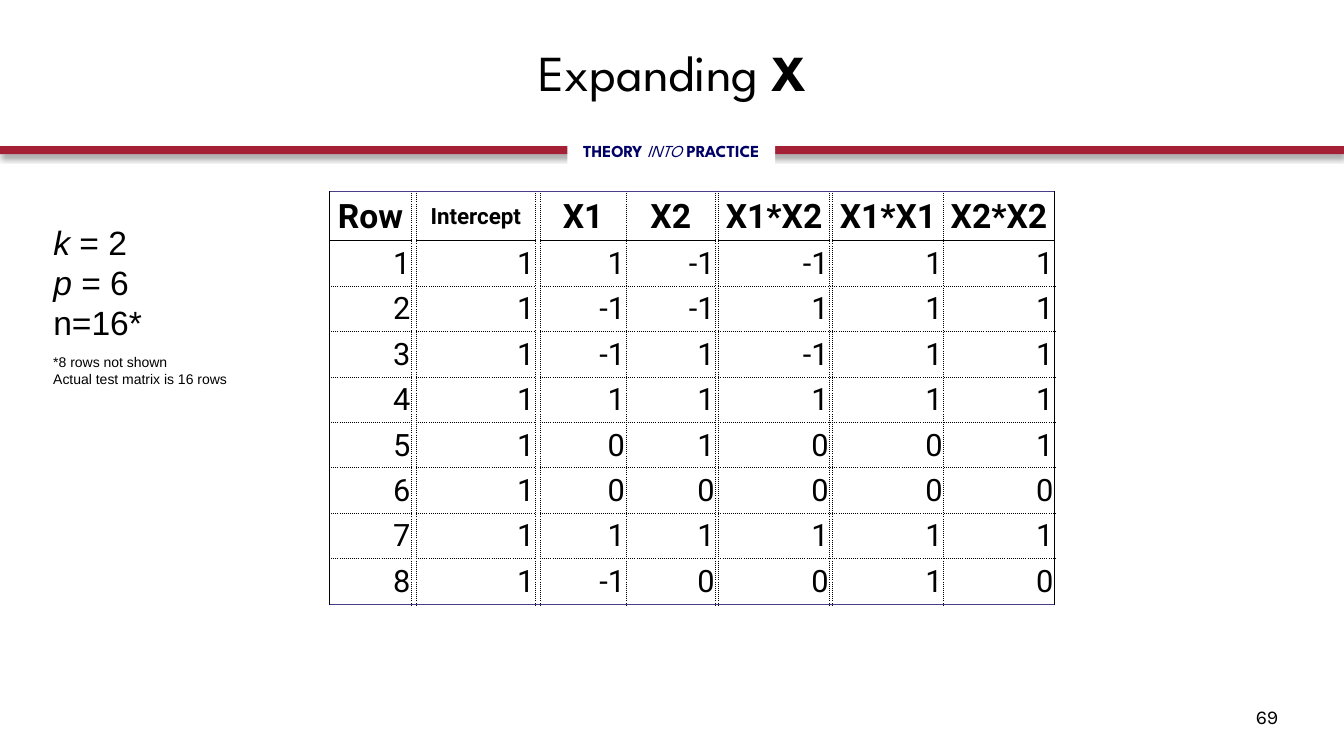
"""Builds the slide that expands the model matrix X."""
import dataclasses
import typing

import lxml.etree
import pptx
import pptx.dml.color
import pptx.enum.shapes
import pptx.enum.text
import pptx.oxml.ns
import pptx.util

CELL = pptx.util.Inches(0.1)
BLACK = pptx.dml.color.RGBColor(0, 0, 0)
WHITE = pptx.dml.color.RGBColor(255, 255, 255)
RED = pptx.dml.color.RGBColor(0xA4, 0x21, 0x35)
NAVY = pptx.dml.color.RGBColor(0, 0, 0x66)
PURPLE = pptx.dml.color.RGBColor(0x4B, 0x3B, 0x89)
ALIGN = pptx.enum.text.PP_ALIGN
MIDDLE = pptx.enum.text.MSO_ANCHOR.MIDDLE
SHAPE = pptx.enum.shapes.MSO_SHAPE.RECTANGLE
TOP, BASE = 19, 60
HEIGHTS = [4.9] + [4.5] * 7 + [4.6]


@dataclasses.dataclass(frozen=True)
class Box:
    """A place on the grid: column, row, width and height in cells."""
    col: float
    row: float
    wide: float
    high: float

    def place(self) -> list[int]:
        """Returns the place in slide units."""
        return [round(n * CELL) for n in dataclasses.astuple(self)]


@dataclasses.dataclass(frozen=True)
class Font:
    """The face, size and colour of a text."""
    name: str
    size: float
    color: pptx.dml.color.RGBColor = BLACK


class Bit(typing.NamedTuple):
    """A run of text with its weight and slant."""
    text: str
    bold: bool = False
    slant: bool = False


Lines = list[list[Bit]]


@dataclasses.dataclass(frozen=True)
class Block:
    """A group of matrix columns drawn as one table."""
    left: float
    widths: list[float]
    heads: list[str]
    rows: list[list[int]]
    size: float = 24


BLOCKS = [
    Block(32.7, [8.1], ["Row"], [[n] for n in range(1, 9)]),
    Block(41.3, [11.8], ["Intercept"], [[1]] * 8, 16),
    Block(53.6, [8.5, 8.9], ["X1", "X2"],
          [[1, -1], [-1, -1], [-1, 1], [1, 1], [0, 1], [0, 0], [1, 1], [-1, 0]]),
    Block(71.3, [11], ["X1*X2"], [[-1], [1], [-1], [1], [0], [0], [1], [0]]),
    Block(82.6, [11, 11], ["X1*X1", "X2*X2"],
          [[1, 1], [1, 1], [1, 1], [1, 1], [0, 1], [0, 0], [1, 1], [1, 0]]),
]
FIRST, LAST = BLOCKS[0], BLOCKS[-1]
RIGHT = LAST.left + sum(LAST.widths)


def write(frame, lines: Lines, font: Font, align=ALIGN.LEFT) -> None:
    """Writes lines of runs into a text frame."""
    for i, line in enumerate(lines):
        para = frame.paragraphs[0] if i == 0 else frame.add_paragraph()
        para.alignment = align
        for bit in line:
            run = para.add_run()
            run.text = bit.text
            run.font.name, run.font.size = font.name, pptx.util.Pt(font.size)
            run.font.bold, run.font.italic = bit.bold, bit.slant
            run.font.color.rgb = font.color


def label(slide, box: Box, lines: Lines, font: Font, wrap: bool = False) -> None:
    """Adds a text box."""
    frame = slide.shapes.add_textbox(*box.place()).text_frame
    frame.word_wrap = wrap
    write(frame, lines, font)


def panel(slide, box: Box, fill: pptx.dml.color.RGBColor):
    """Adds a plain filled rectangle."""
    shape = slide.shapes.add_shape(SHAPE, *box.place())
    shape.shadow.inherit = False
    shape.fill.solid()
    shape.fill.fore_color.rgb = fill
    shape.line.fill.background()
    return shape


def child(parent, tag: str, **attrs: str):
    """Adds a drawing element to a parent element."""
    return lxml.etree.SubElement(parent, pptx.oxml.ns.qn(tag), attrs)


def shade(shape) -> None:
    """Casts a soft shadow below a shape."""
    effects = shape._element.spPr.find(pptx.oxml.ns.qn("a:effectLst"))
    cast = child(effects, "a:outerShdw", blurRad=str(pptx.util.Pt(4)),
                 dist=str(pptx.util.Pt(3)), dir="5400000", algn="t", rotWithShape="0")
    child(child(cast, "a:srgbClr", val=str(BLACK)), "a:alpha", val="40000")


def edge(cell, side: str, firm: bool) -> None:
    """Draws one side of a cell, firm or dotted."""
    width = pptx.util.Pt(1 if firm else 0.5)
    line = child(cell._tc.get_or_add_tcPr(), f"a:ln{side}", w=str(width))
    child(child(line, "a:solidFill"), "a:srgbClr", val=str(BLACK))
    child(line, "a:prstDash", val="solid" if firm else "sysDot")


def matrix(slide, block: Block) -> None:
    """Adds the table of one block."""
    wide = len(block.widths)
    box = Box(block.left, TOP, sum(block.widths), BASE - TOP)
    table = slide.shapes.add_table(len(HEIGHTS), wide, *box.place()).table
    table.first_row = table.horz_banding = False
    for col, width in zip(table.columns, block.widths):
        col.width = round(width * CELL)
    for row, high in zip(table.rows, HEIGHTS):
        row.height = round(high * CELL)
    end = len(HEIGHTS) - 1
    for y, row in enumerate([block.heads, *block.rows]):
        for x, value in enumerate(row):
            cell, head = table.cell(y, x), y == 0
            edge(cell, "L", block is FIRST and x == 0)
            edge(cell, "R", block is LAST and x == wide - 1)
            edge(cell, "T", y <= 1)
            edge(cell, "B", y in (0, end))
            cell.fill.background()
            cell.vertical_anchor = MIDDLE
            cell.margin_left = cell.margin_right = cell.margin_top = round(CELL / 10)
            cell.margin_bottom = 0
            write(cell.text_frame, [[Bit(str(value), head)]],
                  Font("Roboto", block.size if head else 22),
                  ALIGN.CENTER if head else ALIGN.RIGHT)


def rule(slide, row: float) -> None:
    """Draws a thin line across all blocks."""
    ends = Box(FIRST.left, row, RIGHT, row).place()
    line = slide.shapes.add_connector(pptx.enum.shapes.MSO_CONNECTOR.STRAIGHT, *ends)
    line.line.color.rgb = PURPLE
    line.line.width = pptx.util.Pt(0.5)
    child(line._element.spPr, "a:effectLst")


def main() -> None:
    """Builds and saves the slide."""
    deck = pptx.Presentation()
    deck.slide_width, deck.slide_height = round(133.33 * CELL), 75 * CELL
    slide = deck.slides.add_slide(deck.slide_layouts[5])
    shade(panel(slide, Box(0, 14.5, 133.33, 0.8), RED))
    badge = panel(slide, Box(56.3, 13.5, 20.6, 2.9), WHITE).text_frame
    badge.word_wrap = False
    write(badge, [[Bit("THEORY ", True), Bit("INTO", slant=True), Bit(" PRACTICE", True)]],
          Font("League Spartan", 12, NAVY), ALIGN.CENTER)
    label(slide, Box(123.6, 69.4, 6.4, 3.3), [[Bit("69")]], Font("Karla", 14), True)
    title = slide.shapes.title
    title.left, title.top, title.width, title.height = Box(24, 2, 85.4, 11).place()
    title.text_frame.vertical_anchor = MIDDLE
    write(title.text_frame, [[Bit("Expanding "), Bit("X", True)]],
          Font("League Spartan", 36), ALIGN.CENTER)
    title.text_frame.paragraphs[0].line_spacing = 0.9
    for block in BLOCKS:
        matrix(slide, block)
    for row in (TOP, BASE):
        rule(slide, row)
    label(slide, Box(4.3, 21.5, 10.9, 13.1),
          [[Bit("k", slant=True), Bit(" = 2")], [Bit("p", slant=True), Bit(" = 6")],
           [Bit("n=16*")]], Font("Arial", 24))
    label(slide, Box(4.3, 34.6, 19.4, 4.4),
          [[Bit("*8 rows not shown")], [Bit("Actual test matrix is 16 rows")]],
          Font("Arial", 10))
    deck.save("out.pptx")


if __name__ == "__main__":
    main()
